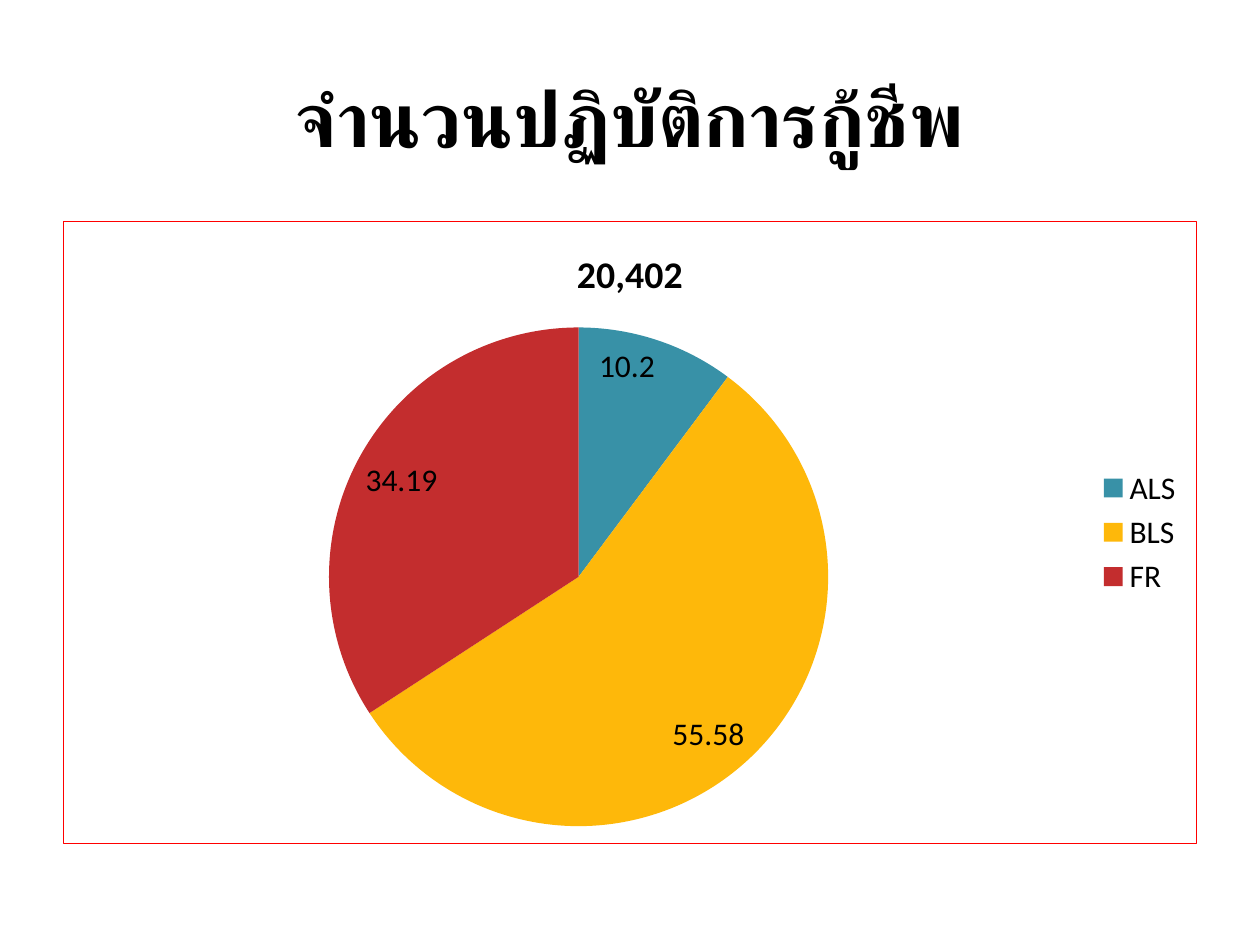
from lxml import etree
from pptx import Presentation
from pptx.chart.data import CategoryChartData as ChartData
from pptx.dml.color import RGBColor
from pptx.enum.chart import XL_CHART_TYPE as ChartType
from pptx.enum.chart import XL_LABEL_POSITION as LabelPosition
from pptx.enum.chart import XL_LEGEND_POSITION as LegendPosition
from pptx.enum.text import MSO_ANCHOR as Anchor
from pptx.enum.text import PP_ALIGN as Align
from pptx.oxml import parse_xml
from pptx.oxml.ns import nsdecls, qn
from pptx.util import Inches, Pt

FONT = "Calibri"
TOTAL = "20,402"
UNITS = {
    "ALS": (10.2, "3891A7"),
    "BLS": (55.58, "FEB80A"),
    "FR": (34.19, "C32D2E"),
}


def color(code):
    """Turn a hex string into a colour."""
    return RGBColor.from_string(code)


def set_values(target, values):
    """Set each named attribute of the target."""
    for name, value in values.items():
        setattr(target, name, value)


def style_font(font, size, bold=False):
    """Give a font the face and colour of the slide."""
    set_values(font, {"name": FONT, "size": Pt(size), "bold": bold})
    font.color.rgb = color("000000")


def add_heading(page, box, text):
    """Place the centred heading in the box."""
    frame = page.shapes.add_textbox(*box).text_frame
    set_values(frame, {"word_wrap": True, "vertical_anchor": Anchor.MIDDLE})
    para = frame.paragraphs[0]
    para.alignment = Align.CENTER
    span = para.add_run()
    span.text = text
    style_font(span.font, 44, bold=True)


def add_border(chart, code, width):
    """Draw a solid line around the chart area."""
    border = parse_xml(
        f'<c:spPr {nsdecls("c", "a")}><a:noFill/><a:ln w="{Pt(width)}">'
        f'<a:solidFill><a:srgbClr val="{code}"/></a:solidFill></a:ln></c:spPr>'
    )
    chart.element.find(qn("c:chart")).addnext(border)
    corners = chart.element.find(qn("c:roundedCorners"))
    if corners is None:
        corners = etree.Element(qn("c:roundedCorners"))
        chart.element.find(qn("c:chart")).addprevious(corners)
    corners.set("val", "0")


def add_pie(page, box):
    """Place the pie of operations by unit in the box."""
    data = ChartData()
    data.categories = list(UNITS)
    data.add_series(TOTAL, [value for value, _ in UNITS.values()])
    chart = page.shapes.add_chart(ChartType.PIE, *box, data).chart
    style_font(chart.font, 18)
    chart.has_title = True
    chart.chart_title.include_in_layout = False
    span = chart.chart_title.text_frame.paragraphs[0].add_run()
    span.text = TOTAL
    style_font(span.font, 21.6, bold=True)
    chart.has_legend = True
    set_values(chart.legend, {"position": LegendPosition.RIGHT, "include_in_layout": False})
    plot = chart.plots[0]
    set_values(plot, {"vary_by_categories": True, "has_data_labels": True})
    labels = {
        "show_value": True,
        "show_percentage": False,
        "position": LabelPosition.INSIDE_END,
        "number_format": "General",
        "number_format_is_linked": False,
    }
    set_values(plot.data_labels, labels)
    for index, (_, code) in enumerate(UNITS.values()):
        fill = plot.series[0].points[index].format.fill
        fill.solid()
        fill.fore_color.rgb = color(code)
    add_border(chart, "FF0000", 0.75)


def main():
    """Build the slide and save it."""
    deck = Presentation()
    set_values(deck, {"slide_width": Inches(10), "slide_height": Inches(7.5)})
    page = deck.slides.add_slide(deck.slide_layouts[6])
    left, width = Inches(0.5), Inches(9)
    add_heading(page, (left, Inches(0.3), width, Inches(1.25)), "จำนวนปฏิบัติการกู้ชีพ")
    add_pie(page, (left, Inches(1.75), width, Inches(4.95)))
    deck.save("out.pptx")


if __name__ == "__main__":
    main()
